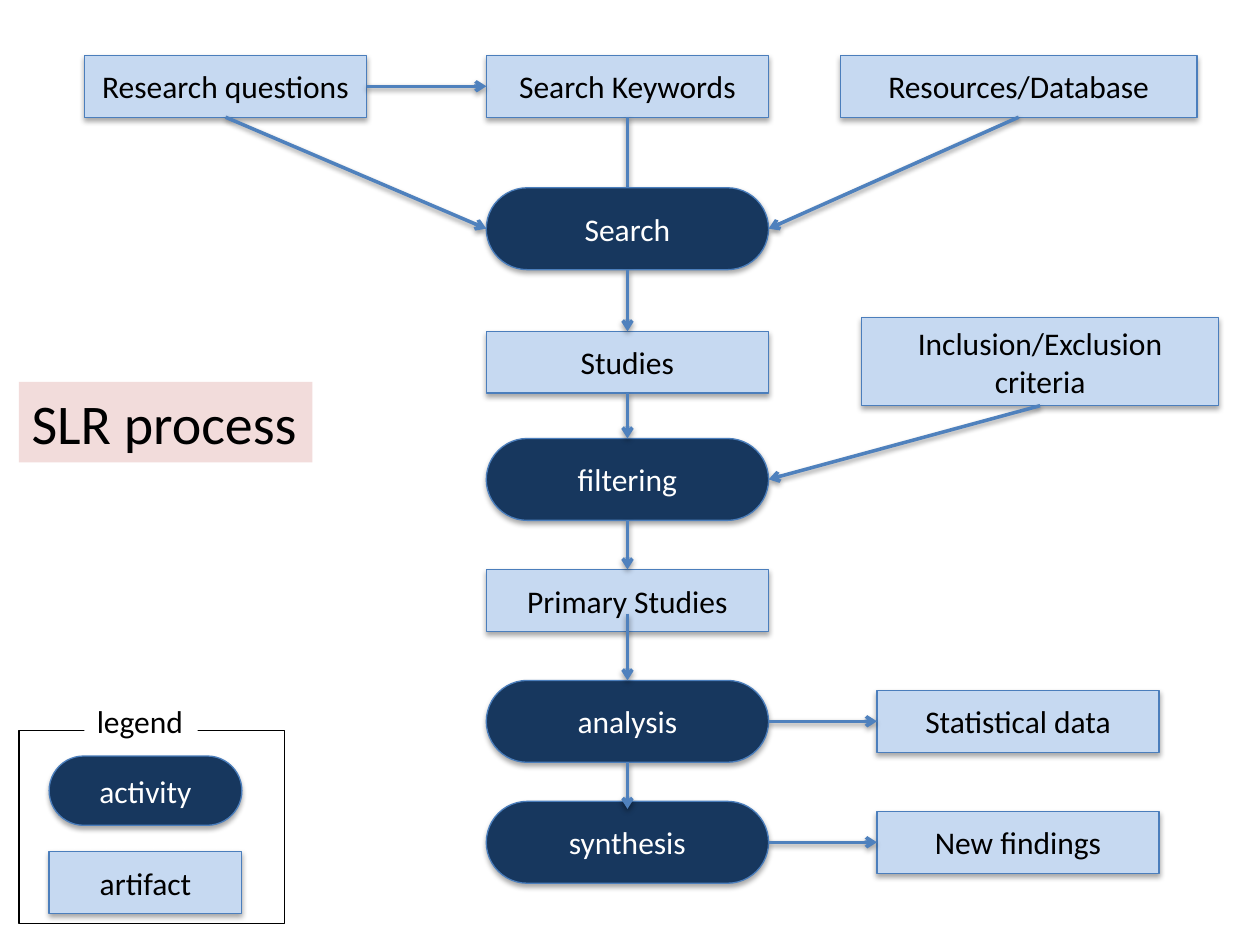
from dataclasses import dataclass
from typing import Optional

from lxml import etree
from pptx import Presentation
from pptx.dml.color import RGBColor
from pptx.enum.shapes import MSO_CONNECTOR, MSO_SHAPE
from pptx.enum.text import MSO_ANCHOR, MSO_AUTO_SIZE, PP_ALIGN
from pptx.oxml.ns import qn
from pptx.util import Inches, Pt

RECT, PILL = MSO_SHAPE.RECTANGLE, MSO_SHAPE.ROUNDED_RECTANGLE
STRAIGHT = MSO_CONNECTOR.STRAIGHT
CENTER, LEFT = PP_ALIGN.CENTER, PP_ALIGN.LEFT
MIDDLE, TOP_ANCHOR = MSO_ANCHOR.MIDDLE, MSO_ANCHOR.TOP
NO_FIT = MSO_AUTO_SIZE.NONE
TOP, WEST, BOTTOM, EAST = range(4)  # connection sites

COLORS = {
    "artifact": "C6D9F1", "activity": "17375E", "outline": "4B7EBC",
    "arrow": "4F81BD", "title": "F2DCDB", "black": "000000", "white": "FFFFFF",
}
LABEL_FONT = {"name": "Calibri", "size": Pt(18)}
TITLE_FONT = {"name": "Calibri", "size": Pt(32)}

# Main column and common box sizes, in inches
COLUMN_X, OUTPUT_X, BOX_W = 3.86, 6.96, 2.24
WIDE_W, LEGEND_W = 2.83, 1.53
ARTIFACT_H, ACTIVITY_H = 0.49, 0.65
CENTER_X = COLUMN_X + BOX_W / 2


@dataclass
class Step:
    text: str
    x: float
    y: float
    w: float = BOX_W
    h: float = ARTIFACT_H
    activity: bool = False


@dataclass
class Arrow:
    """Joins two steps; a given y leaves that end free on the main column."""
    source: str
    source_site: int
    target: str
    target_site: int
    start_y: Optional[float] = None
    end_y: Optional[float] = None


ARTIFACTS = [
    Step("Research questions", 0.67, 0.44),
    Step("Search Keywords", COLUMN_X, 0.44),
    Step("Resources/Database", 6.67, 0.44, WIDE_W),
    Step("Studies", COLUMN_X, 2.63),
    Step("Inclusion/Exclusion criteria", 6.84, 2.52, WIDE_W, 0.7),
    Step("Primary Studies", COLUMN_X, 4.52),
    Step("Statistical data", OUTPUT_X, 5.48),
    Step("New findings", OUTPUT_X, 6.44),
]
ACTIVITIES = [
    Step(text, COLUMN_X, y, h=ACTIVITY_H, activity=True)
    for text, y in [("Search", 1.49), ("filtering", 3.48),
                    ("analysis", 5.4), ("synthesis", 6.36)]
]
LEGEND = [
    Step("activity", 0.39, 6, LEGEND_W, 0.55, True),
    Step("artifact", 0.39, 6.76, LEGEND_W),
]
# This arrow ends behind the Search activity
KEYWORD_ARROW = Arrow("Search Keywords", BOTTOM, "Search", TOP, end_y=1.72)
ARROWS = [
    Arrow("Research questions", EAST, "Search Keywords", WEST),
    Arrow("Research questions", BOTTOM, "Search", WEST),
    Arrow("Resources/Database", BOTTOM, "Search", EAST),
    Arrow("Search", BOTTOM, "Studies", TOP),
    Arrow("Studies", BOTTOM, "filtering", TOP),
    Arrow("Inclusion/Exclusion criteria", BOTTOM, "filtering", EAST),
    Arrow("filtering", BOTTOM, "Primary Studies", TOP),
    Arrow("Primary Studies", BOTTOM, "analysis", TOP, start_y=4.87),
    Arrow("analysis", BOTTOM, "synthesis", TOP, end_y=6.42),
    Arrow("analysis", EAST, "Statistical data", WEST),
    Arrow("synthesis", EAST, "New findings", WEST),
]


def rgb(name: str) -> RGBColor:
    return RGBColor.from_string(COLORS[name])


def add_shadow(properties, distance: float, opacity: int) -> None:
    effects = properties.find(qn("a:effectLst"))
    if effects is None:
        effects = etree.SubElement(properties, qn("a:effectLst"))
    shadow = etree.SubElement(
        effects, qn("a:outerShdw"), blurRad=str(Pt(3.1)), dist=str(Pt(distance)),
        dir="5400000", rotWithShape="0")
    color = etree.SubElement(shadow, qn("a:srgbClr"), val=COLORS["black"])
    etree.SubElement(color, qn("a:alpha"), val=str(opacity * 1000))


def write(frame, text: str, color: str, align, font_format: dict) -> None:
    frame.text = text
    paragraph = frame.paragraphs[0]
    paragraph.alignment = align
    font = paragraph.runs[0].font
    for attribute, value in font_format.items():
        setattr(font, attribute, value)
    font.color.rgb = rgb(color)


def add_step(slide, step: Step):
    box = slide.shapes.add_shape(
        PILL if step.activity else RECT,
        Inches(step.x), Inches(step.y), Inches(step.w), Inches(step.h))
    if step.activity:
        box.adjustments[0] = 0.5
    box.fill.solid()
    box.fill.fore_color.rgb = rgb("activity" if step.activity else "artifact")
    box.line.color.rgb = rgb("outline")
    box.line.width = Pt(0.75)
    box.shadow.inherit = False
    add_shadow(box._element.spPr, 1.8, 35)
    box.text_frame.vertical_anchor = MIDDLE
    write(box.text_frame, step.text, "white" if step.activity else "black",
          CENTER, LABEL_FONT)
    return box


def add_arrow(slide, arrow: Arrow, boxes: dict) -> None:
    line = slide.shapes.add_connector(
        STRAIGHT, Inches(CENTER_X), Inches(arrow.start_y or 0),
        Inches(CENTER_X), Inches(arrow.end_y or 0))
    if arrow.start_y is None:
        line.begin_connect(boxes[arrow.source], arrow.source_site)
    if arrow.end_y is None:
        line.end_connect(boxes[arrow.target], arrow.target_site)
    line.line.color.rgb = rgb("arrow")
    line.line.width = Pt(2)
    properties = line._element.spPr
    etree.SubElement(properties.find(qn("a:ln")), qn("a:tailEnd"), type="arrow")
    add_shadow(properties, 1.6, 38)


def add_legend(slide) -> None:
    frame = slide.shapes.add_shape(
        RECT, Inches(0.15), Inches(5.8), Inches(2.11), Inches(1.53))
    frame.fill.background()
    frame.line.color.rgb = rgb("black")
    frame.line.width = Pt(0.75)
    frame.shadow.inherit = False
    label = slide.shapes.add_textbox(
        Inches(0.67), Inches(5.52), Inches(0.9), Inches(0.4))
    label.fill.solid()
    label.fill.fore_color.rgb = rgb("white")
    write(label.text_frame, "legend", "black", LEFT, LABEL_FONT)
    for step in LEGEND:
        add_step(slide, step)


def add_title(slide) -> None:
    title = slide.shapes.title
    place = {"left": 0.15, "top": 3.03, "width": 2.33, "height": 0.64}
    for attribute, value in place.items():
        setattr(title, attribute, Inches(value))
    title.fill.solid()
    title.fill.fore_color.rgb = rgb("title")
    frame = title.text_frame
    frame_format = {"word_wrap": False, "auto_size": NO_FIT,
                    "vertical_anchor": TOP_ANCHOR}
    for attribute, value in frame_format.items():
        setattr(frame, attribute, value)
    write(frame, "SLR process", "black", LEFT, TITLE_FONT)


def main() -> None:
    deck = Presentation()
    deck.slide_width, deck.slide_height = Inches(10), Inches(7.5)
    slide = deck.slides.add_slide(deck.slide_layouts[5])
    add_title(slide)

    # Process flow, from back to front
    boxes = {step.text: add_step(slide, step) for step in ARTIFACTS}
    add_arrow(slide, KEYWORD_ARROW, boxes)
    boxes.update({step.text: add_step(slide, step) for step in ACTIVITIES})
    for arrow in ARROWS:
        add_arrow(slide, arrow, boxes)

    add_legend(slide)
    deck.save("out.pptx")


if __name__ == "__main__":
    main()
